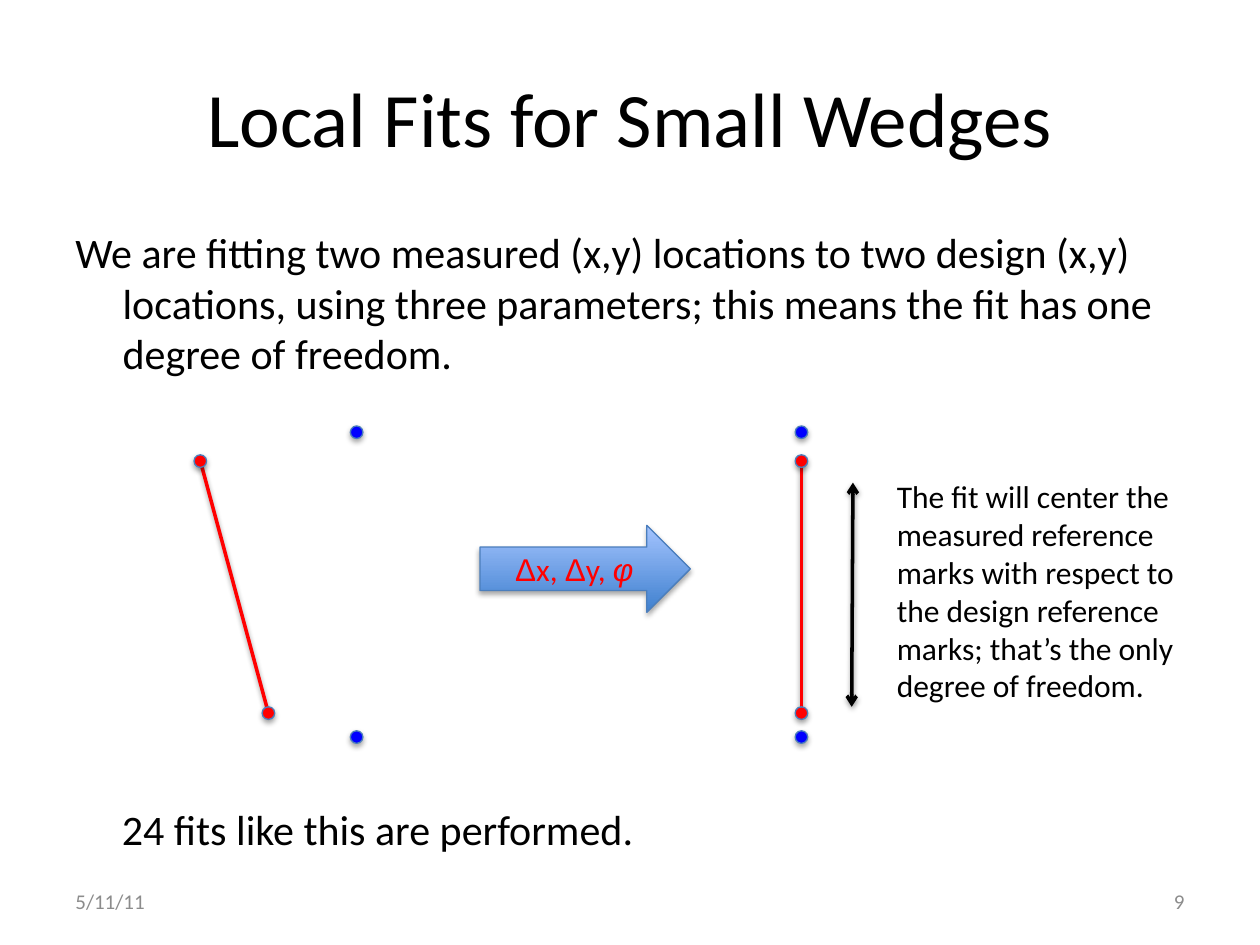
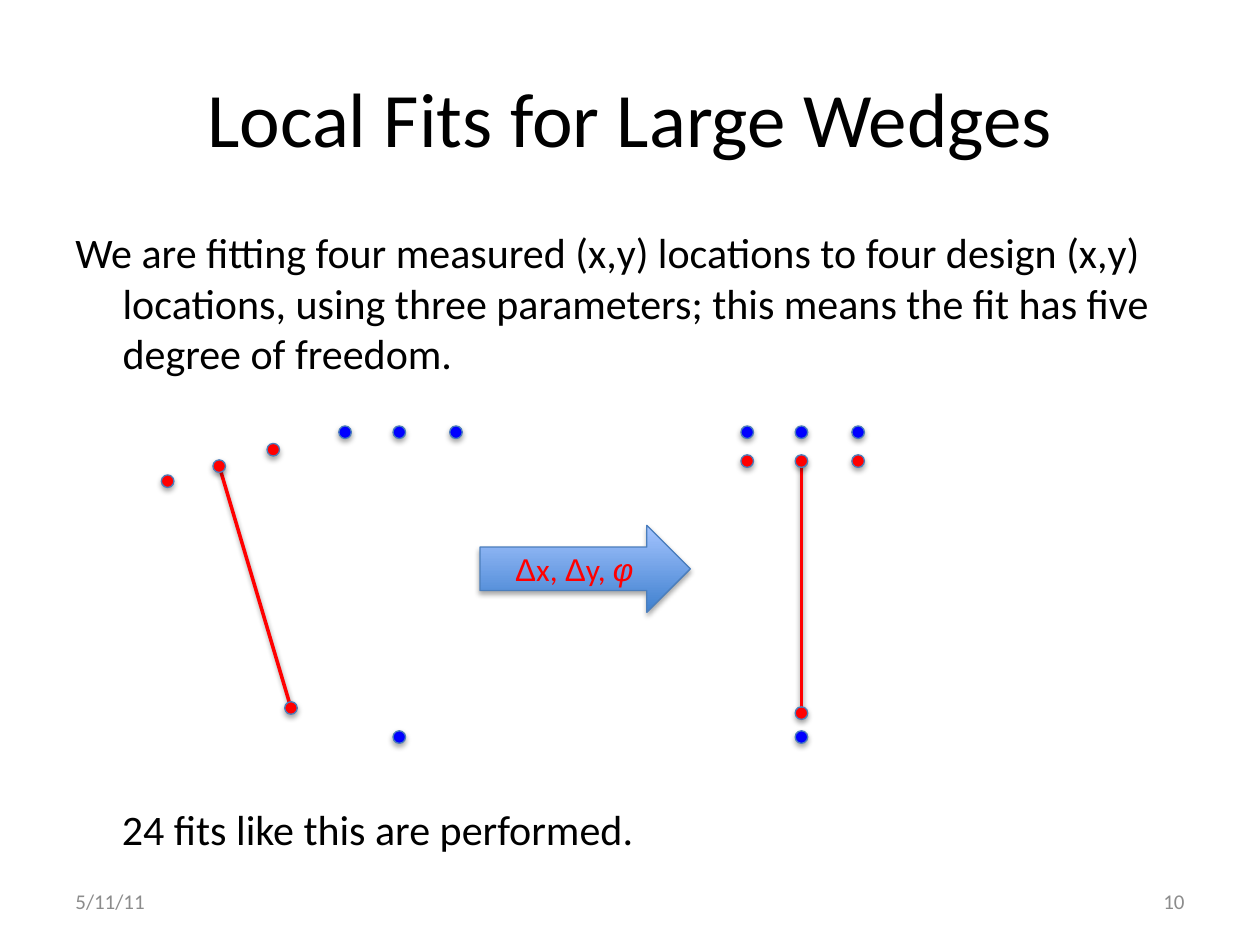
from lxml import etree
from pptx import Presentation
from pptx.dml.color import RGBColor
from pptx.enum.shapes import MSO_CONNECTOR, MSO_SHAPE
from pptx.enum.text import MSO_ANCHOR, PP_ALIGN
from pptx.oxml.ns import qn
from pptx.util import Pt

LEFT, CENTER, RIGHT = PP_ALIGN.LEFT, PP_ALIGN.CENTER, PP_ALIGN.RIGHT
TOP, MIDDLE = MSO_ANCHOR.TOP, MSO_ANCHOR.MIDDLE

COLORS = {
    "text": "000000",
    "footer": "8C8C8C",
    "measured": "FF0000",
    "design": "0000FF",
    "outline": "4B7EBC",
    "arrow_low": "3F80CE",
    "arrow_high": "A4C4FF",
    "shadow": "000000",
}
FONT, SYMBOL_FONT = "Calibri", "Arial"
DATE = "5/11/11"
CLOSING = "24 fits like this are performed."
INTRO = ("We are fitting {count} measured (x,y) locations to {count} design (x,y) "
         "locations, using three parameters; this means the fit has {freedom} "
         "degree of freedom.")
NOTE = ("The fit will center the measured reference marks with respect to the "
        "design reference marks; that’s the only degree of freedom.")
# Arrow label: text, font, italic
PARAMETERS = [("Δ", SYMBOL_FONT, False), ("x, ", FONT, False), ("Δ", SYMBOL_FONT, False),
              ("y, ", FONT, False), ("φ", SYMBOL_FONT, True)]

# The first two measured marks are the ends of the wedge; offsets are of the top marks
WEDGES = [
    {"title": "Local Fits for Small Wedges", "number": 9,
     "count": "two", "freedom": "one", "note": NOTE,
     "design_x": 203.8, "offsets": [0],
     "measured": [(114.5, 263.5), (153.4, 407.5)]},
    {"title": "Local Fits for Large Wedges", "number": 10,
     "count": "four", "freedom": "five", "note": None,
     "design_x": 228.2, "offsets": [-31, 0, 32.4],
     "measured": [(125.3, 266.4), (166.3, 404.6), (95.8, 275), (156.2, 257)]},
]

# Geometry in points
DOT = 7.2
FITTED_X = 458
DESIGN_Y = (247, 421.2)
FITTED_Y = (263.5, 407.5)
FREEDOM_ARROW = ((487.4, 275.8), (486.7, 403.9))


def color(name):
    return RGBColor.from_string(COLORS[name])


def add_shadow(shape, opacity, distance):
    """Soft shadow straight below a shape or line."""
    effects = etree.SubElement(shape._element.spPr, qn("a:effectLst"))
    shadow = etree.SubElement(effects, qn("a:outerShdw"), blurRad=str(Pt(3.1)),
                              dist=str(Pt(distance)), dir="5400000", rotWithShape="0")
    shade = etree.SubElement(shadow, qn("a:srgbClr"), val=COLORS["shadow"])
    etree.SubElement(shade, qn("a:alpha"), val=str(opacity * 1000))


def add_text(page, text, left, top, width, height, size,
             align=LEFT, anchor=TOP, tone="text", hanging=0):
    box = page.shapes.add_textbox(Pt(left), Pt(top), Pt(width), Pt(height))
    frame = box.text_frame
    frame.word_wrap = True
    frame.vertical_anchor = anchor
    para = frame.paragraphs[0]
    para.text = text
    para.alignment = align
    para.font.name, para.font.size = FONT, Pt(size)
    para.font.color.rgb = color(tone)
    if hanging:
        properties = para._p.get_or_add_pPr()
        properties.set("marL", str(Pt(hanging)))
        properties.set("indent", str(-Pt(hanging)))


def add_line(page, start, end, tone, arrows=False):
    points = [Pt(value) for value in (*start, *end)]
    line = page.shapes.add_connector(MSO_CONNECTOR.STRAIGHT, *points)
    line.line.color.rgb = color(tone)
    line.line.width = Pt(2)
    if arrows:
        for end_name in ("a:headEnd", "a:tailEnd"):
            etree.SubElement(line.line._get_or_add_ln(), qn(end_name), type="arrow")
    add_shadow(line, 38, 1.6)


def add_outlined(page, kind, left, top, width, height):
    shape = page.shapes.add_shape(kind, Pt(left), Pt(top), Pt(width), Pt(height))
    shape.line.color.rgb = color("outline")
    shape.line.width = Pt(0.75)
    return shape


def add_dots(page, centers, tone):
    for x, y in centers:
        dot = add_outlined(page, MSO_SHAPE.OVAL, x - DOT / 2, y - DOT / 2, DOT, DOT)
        dot.fill.solid()
        dot.fill.fore_color.rgb = color(tone)
        add_shadow(dot, 35, 1.8)


def add_fit_arrow(page):
    arrow = add_outlined(page, MSO_SHAPE.RIGHT_ARROW, 274.3, 300.2, 120.2, 49.7)
    arrow.fill.gradient()
    arrow.fill.gradient_angle = 90
    for stop, tone in zip(arrow.fill.gradient_stops, ("arrow_low", "arrow_high")):
        stop.color.rgb = color(tone)
    add_shadow(arrow, 35, 1.8)
    arrow.text_frame.vertical_anchor = MIDDLE
    para = arrow.text_frame.paragraphs[0]
    para.alignment = CENTER
    for text, font, italic in PARAMETERS:
        span = para.add_run()
        span.text = text
        span.font.name, span.font.size, span.font.italic = font, Pt(18), italic
        span.font.color.rgb = color("measured")


def wedge_marks(x, offsets, heights):
    """Marks of an upright wedge: a row on top and one at the bottom."""
    top, bottom = heights
    return [(x + offset, top) for offset in offsets] + [(x, bottom)]


def add_wedge_page(deck, wedge):
    page = deck.slides.add_slide(deck.slide_layouts[6])

    # Title, introduction and footer
    add_text(page, wedge["title"], 36, 21.6, 648, 90, 44, CENTER, MIDDLE)
    add_text(page, INTRO.format(**wedge), 36, 126, 648, 356.4, 24, hanging=27)
    add_text(page, DATE, 36, 500.4, 168, 28.8, 12, LEFT, MIDDLE, "footer")
    add_text(page, str(wedge["number"]), 516, 500.4, 168, 28.8, 12, RIGHT, MIDDLE, "footer")

    # Measured wedge before and after the fit, with the design marks
    offsets = wedge["offsets"]
    add_line(page, *wedge["measured"][:2], "measured")
    add_line(page, *[(FITTED_X, y) for y in FITTED_Y], "measured")
    add_dots(page, wedge["measured"], "measured")
    add_dots(page, wedge_marks(FITTED_X, offsets, FITTED_Y), "measured")
    for x in (wedge["design_x"], FITTED_X):
        add_dots(page, wedge_marks(x, offsets, DESIGN_Y), "design")
    add_fit_arrow(page)

    # Remark on the remaining freedom, and closing line
    if wedge["note"]:
        add_text(page, wedge["note"], 505.4, 269.3, 190.8, 138.2, 18)
        add_line(page, *FREEDOM_ARROW, "text", arrows=True)
    add_text(page, CLOSING, 62.6, 455.8, 612.7, 36, 24)


def main():
    deck = Presentation()
    deck.slide_width, deck.slide_height = Pt(720), Pt(540)
    for wedge in WEDGES:
        add_wedge_page(deck, wedge)
    deck.save("out.pptx")


if __name__ == "__main__":
    main()
